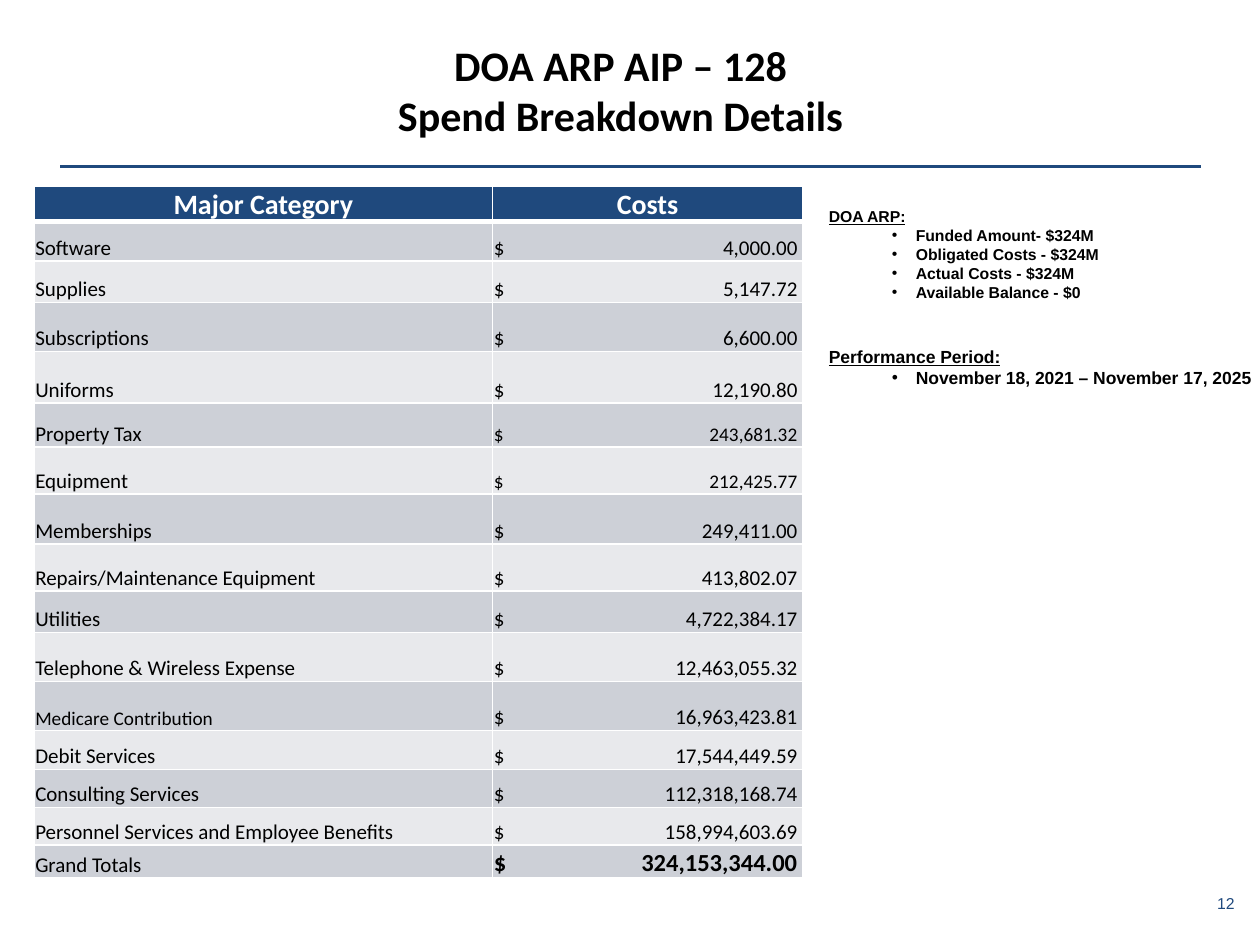
from dataclasses import dataclass

from lxml.etree import SubElement
from pptx import Presentation
from pptx.dml.color import RGBColor
from pptx.enum.shapes import MSO_CONNECTOR
from pptx.enum.text import MSO_ANCHOR, PP_ALIGN
from pptx.oxml.ns import qn
from pptx.util import Inches, Pt


@dataclass(frozen=True)
class Theme:
    navy: str = "1F497D"
    black: str = "000000"
    white: str = "FFFFFF"
    bands: tuple = ("CDD0D7", "E8E9EC")
    table_font: str = "Calibri"
    note_font: str = "Arial"
    title: int = 24
    header: int = 16
    total: int = 14
    body: int = 12
    small: int = 11
    period: int = 10
    note: int = 9


THEME = Theme()
LEFT, RIGHT = 0.27, 9.53
COLUMNS = (3.64, 2.46)
NOTES_LEFT = 6.48
AMOUNT_TAB = 2.41
HEADER_HEIGHT = 0.28

# Category, amount, row height, category size, amount size
COSTS = [
    ("Software", "4,000.00", 0.31, THEME.body, THEME.body),
    ("Supplies", "5,147.72", 0.33, THEME.body, THEME.body),
    ("Subscriptions", "6,600.00", 0.39, THEME.body, THEME.body),
    ("Uniforms", "12,190.80", 0.41, THEME.body, THEME.body),
    ("Property Tax", "243,681.32", 0.35, THEME.body, THEME.small),
    ("Equipment", "212,425.77", 0.37, THEME.body, THEME.small),
    ("Memberships", "249,411.00", 0.4, THEME.body, THEME.body),
    ("Repairs/Maintenance Equipment", "413,802.07", 0.37, THEME.body, THEME.body),
    ("Utilities", "4,722,384.17", 0.33, THEME.body, THEME.body),
    ("Telephone & Wireless Expense", "12,463,055.32", 0.39, THEME.body, THEME.body),
    ("Medicare Contribution", "16,963,423.81", 0.39, THEME.small, THEME.body),
    ("Debit Services", "17,544,449.59", 0.31, THEME.body, THEME.body),
    ("Consulting Services", "112,318,168.74", 0.3, THEME.body, THEME.body),
    ("Personnel Services and Employee Benefits", "158,994,603.69", 0.3, THEME.body, THEME.body),
    ("Grand Totals", "324,153,344.00", 0.26, THEME.body, THEME.total),
]
FUNDING = ["Funded Amount- $324M", "Obligated Costs - $324M",
           "Actual Costs - $324M", "Available Balance - $0"]
PERIOD = ["November 18, 2021 – November 17, 2025"]


def style(para, size, family, color=THEME.black, bold=False):
    font = para.font
    font.size, font.name, font.bold = Pt(size), family, bold
    font.color.rgb = RGBColor.from_string(color)


def add_title(page, text):
    title = page.shapes.title
    title.left, title.top = Inches(LEFT), Inches(0.19)
    title.width, title.height = Inches(RIGHT - LEFT), Inches(1.04)
    frame = title.text_frame
    frame.margin_left = Inches(0.15)
    frame.vertical_anchor = MSO_ANCHOR.MIDDLE
    frame.text = text
    para = frame.paragraphs[0]
    para.alignment = PP_ALIGN.CENTER
    style(para, THEME.title, THEME.table_font, bold=True)


def add_rule(page, left, right, top):
    rule = page.shapes.add_connector(MSO_CONNECTOR.STRAIGHT, Inches(left), Inches(top),
                                     Inches(right), Inches(top))
    rule.line.color.rgb = RGBColor.from_string(THEME.navy)
    rule.line.width = Pt(1.5)
    SubElement(rule._element.spPr, qn("a:effectLst"))


def add_bullet(para):
    properties = para._p.get_or_add_pPr()
    properties.set("marL", str(Inches(0.69)))
    properties.set("indent", str(Inches(-0.19)))
    SubElement(properties, qn("a:buFont"), typeface=THEME.note_font)
    SubElement(properties, qn("a:buChar"), char="•")


def add_note(page, top, width, height, heading, items, size):
    box = page.shapes.add_textbox(Inches(NOTES_LEFT), Inches(top), Inches(width), Inches(height))
    frame = box.text_frame
    frame.word_wrap = True
    frame.margin_right = 0
    heading_para = frame.paragraphs[0]
    heading_para.text = heading
    style(heading_para, size, THEME.note_font, bold=True)
    heading_para.font.underline = True
    for item in items:
        para = frame.add_paragraph()
        para.text = item
        para.level = 1
        add_bullet(para)
        style(para, size, THEME.note_font, bold=True)


def add_page_number(page, number):
    box = page.shapes.add_textbox(Inches(9.57), Inches(7.05), Inches(0.33), Inches(0.24))
    frame = box.text_frame
    frame.word_wrap = False
    frame.margin_left = frame.margin_right = Inches(0.09)
    frame.margin_top = frame.margin_bottom = Inches(0.04)
    frame.text = number
    style(frame.paragraphs[0], THEME.note, THEME.note_font, THEME.navy)


def add_borders(cell, bottom):
    properties = cell._tc.get_or_add_tcPr()
    for side, width in (("L", 1), ("R", 1), ("T", 1), ("B", bottom)):
        line = SubElement(properties, qn(f"a:ln{side}"), w=str(Pt(width)))
        fill = SubElement(line, qn("a:solidFill"))
        SubElement(fill, qn("a:srgbClr"), val=THEME.white)


def add_amount_tab(para):
    """Set a right tab that lines up the ends of the amounts."""
    tabs = SubElement(para._p.get_or_add_pPr(), qn("a:tabLst"))
    SubElement(tabs, qn("a:tab"), pos=str(Inches(AMOUNT_TAB)), algn="r")


def fill_cell(cell, text, fill, bottom=1):
    """Write and paint a cell, and return its paragraph for styling."""
    add_borders(cell, bottom)
    cell.fill.solid()
    cell.fill.fore_color.rgb = RGBColor.from_string(fill)
    cell.vertical_anchor = MSO_ANCHOR.BOTTOM
    cell.margin_left = cell.margin_right = cell.margin_top = Inches(0.01)
    cell.margin_bottom = 0
    cell.text = text
    return cell.text_frame.paragraphs[0]


def add_cost_table(page):
    heights = [HEADER_HEIGHT] + [cost[2] for cost in COSTS]
    table = page.shapes.add_table(len(heights), len(COLUMNS), Inches(LEFT), Inches(1.48),
                                  Inches(sum(COLUMNS)), Inches(sum(heights))).table
    for column, width in zip(table.columns, COLUMNS):
        column.width = Inches(width)
    for row, height in zip(table.rows, heights):
        row.height = Inches(height)
    for index, heading in enumerate(("Major Category", "Costs")):
        para = fill_cell(table.cell(0, index), heading, THEME.navy, bottom=3)
        para.alignment = PP_ALIGN.CENTER
        style(para, THEME.header, THEME.table_font, THEME.white, bold=True)
    for index, (category, amount, _, category_size, amount_size) in enumerate(COSTS):
        band = THEME.bands[index % 2]
        para = fill_cell(table.cell(index + 1, 0), category, band)
        style(para, category_size, THEME.table_font)
        para = fill_cell(table.cell(index + 1, 1), f"$\t{amount}", band)
        add_amount_tab(para)
        style(para, amount_size, THEME.table_font, bold=amount_size == THEME.total)


def main():
    deck = Presentation()
    deck.slide_width, deck.slide_height = Inches(10), Inches(7.5)
    page = deck.slides.add_slide(deck.slide_layouts[5])
    add_rule(page, 0.48, RIGHT, 1.32)
    add_page_number(page, "12")
    add_title(page, "DOA ARP AIP – 128\vSpend Breakdown Details")
    add_note(page, 1.59, 3.17, 1.18, "DOA ARP:", FUNDING, THEME.note)
    add_note(page, 2.7, 3.52, 0.61, "Performance Period:", PERIOD, THEME.period)
    add_cost_table(page)
    deck.save("out.pptx")


if __name__ == "__main__":
    main()
